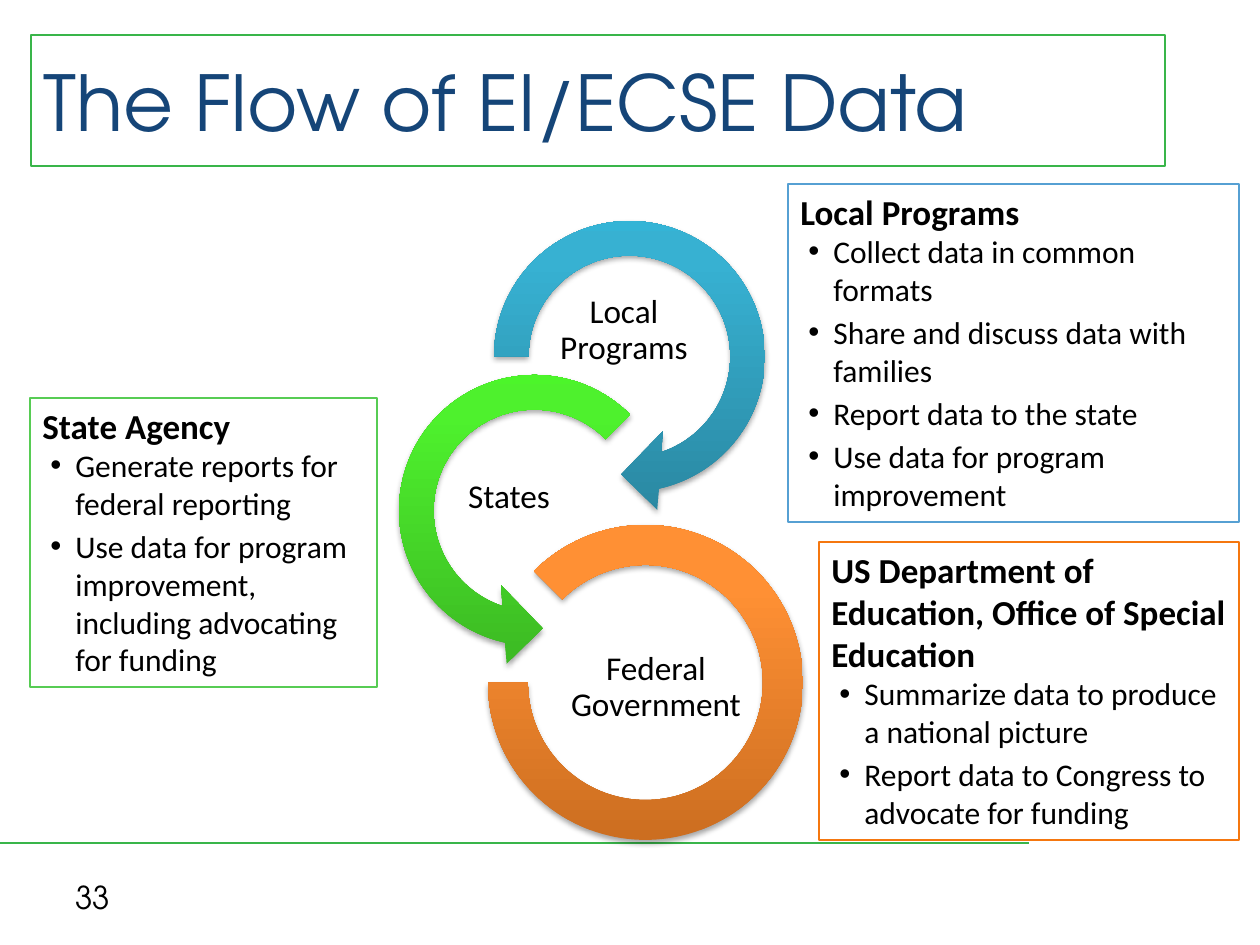
from copy import deepcopy

from lxml import etree
from pptx import Presentation
from pptx.dml.color import RGBColor
from pptx.enum.shapes import MSO_CONNECTOR, MSO_SHAPE
from pptx.enum.text import MSO_ANCHOR, PP_ALIGN
from pptx.oxml import parse_xml
from pptx.oxml.ns import nsdecls, qn
from pptx.util import Pt

PX = 914400 / 126
STRAIGHT = MSO_CONNECTOR.STRAIGHT
RECTANGLE = MSO_SHAPE.RECTANGLE
CIRCULAR_ARROW = MSO_SHAPE.CIRCULAR_ARROW
LEFT_CIRCULAR_ARROW = MSO_SHAPE.LEFT_CIRCULAR_ARROW
BLOCK_ARC = MSO_SHAPE.BLOCK_ARC
MIDDLE, TOP = MSO_ANCHOR.MIDDLE, MSO_ANCHOR.TOP
LEFT, CENTER = PP_ALIGN.LEFT, PP_ALIGN.CENTER

THEME = {
    "display": "TeX Gyre Adventor", "body": "Calibri",
    "title": "154578", "text": "000000", "rule": "39B54A",
    "local": "56A0D3", "state": "57CC54", "federal": "F5770F",
    "blues": ("2A88A2", "37B1D2", "34B4D6"),
    "greens": ("3CB923", "4EF12D", "4CF52A"),
    "oranges": ("CC6E20", "FF9034", "FF9136"),
    "title_size": 44, "heading_size": 20, "label_size": 19, "bullet_size": 18,
}


def box(*px):
    return [round(value * PX) for value in px]


def format_text(paragraph, size, font="body", color="text", bold=False):
    for run in paragraph.runs:
        run.font.name = THEME[font]
        run.font.size = Pt(THEME[size])
        run.font.bold = bold
        run.font.color.rgb = RGBColor.from_string(THEME[color])


presentation = Presentation()
presentation.slide_width, presentation.slide_height = box(1260, 945)
slide = presentation.slides.add_slide(presentation.slide_layouts[6])
shapes = slide.shapes

# Footer rule and slide number
rule = shapes.add_connector(STRAIGHT, *box(0, 843, 1029, 843))
rule.line.color.rgb = RGBColor.from_string(THEME["rule"])
rule.line.width = Pt(1.5)
etree.SubElement(rule._element.spPr, qn("a:effectLst"))

number = shapes.add_textbox(*box(63, 872, 294, 50))
number.text_frame.text = "33"
number.text_frame.vertical_anchor = MIDDLE
format_text(number.text_frame.paragraphs[0], "bullet_size", "display")

# Title
title = shapes.add_textbox(*box(31, 35, 1134, 131))
title.line.color.rgb = RGBColor.from_string(THEME["rule"])
title.line.width = Pt(1)
title.text_frame.text = "The Flow of EI/ECSE Data"
title.text_frame.word_wrap = True
title.text_frame.vertical_anchor = MIDDLE
format_text(title.text_frame.paragraphs[0], "title_size", "display", "title")

# Labels inside the rings
for text, left, top in (
    ("Local Programs", 535, 294),
    ("States", 420, 461),
    ("Federal Government", 567, 651),
):
    label = shapes.add_textbox(*box(left, top, 178, 74))
    frame = label.text_frame
    frame.text = text
    frame.word_wrap = True
    frame.vertical_anchor = MIDDLE
    frame.margin_left, frame.margin_top, frame.margin_right, frame.margin_bottom = box(1, 1, 1, 1)
    paragraph = frame.paragraphs[0]
    paragraph.alignment = CENTER
    paragraph.line_spacing = 0.9
    format_text(paragraph, "label_size")

# Interlocking rings, dark at the bottom and light at the top
for kind, left, top, adjustments, colors in (
    (CIRCULAR_ARROW, 472, 199, (0.11, 11.42, 45, 108, 0.125), "blues"),
    (LEFT_CIRCULAR_ARROW, 377, 353, (0.11, 11.42, 63, 189, 0.125), "greens"),
    (BLOCK_ARC, 488, 525, (135, 108, 0.127), "oranges"),
):
    ring = shapes.add_shape(kind, *box(left, top, 315, 315))
    for index, value in enumerate(adjustments):
        ring.adjustments[index] = value
    ring.line.fill.background()
    ring.fill.gradient()
    ring.fill.gradient_angle = 90
    stop_list = ring._element.spPr.find(".//" + qn("a:gsLst"))
    stop_list.append(deepcopy(stop_list[-1]))
    for stop, position, color in zip(ring.fill.gradient_stops, (0, 0.8, 1), THEME[colors]):
        stop.position = position
        stop.color.rgb = RGBColor.from_string(color)
    ring.shadow.inherit = False
    ring._element.spPr.find(qn("a:effectLst")).append(parse_xml(
        f'<a:outerShdw {nsdecls("a")} blurRad="40000" dist="23000" dir="5400000" rotWithShape="0">'
        '<a:srgbClr val="000000"><a:alpha val="35000"/></a:srgbClr></a:outerShdw>'))

# Panels describing each level
indent, hanging = box(33, -25)
for heading, bullets, bounds, color in (
    ("Local Programs",
     ("Collect data in common formats", "Share and discuss data with families",
      "Report data to the state", "Use data for program improvement"),
     (788, 184, 451, 338), "local"),
    ("State Agency",
     ("Generate reports for federal reporting",
      "Use data for program improvement, including advocating for funding"),
     (30, 398, 347, 289), "state"),
    ("US Department of Education, Office of Special Education",
     ("Summarize data to produce a national picture",
      "Report data to Congress to advocate for funding"),
     (819, 542, 420, 298), "federal"),
):
    panel = shapes.add_shape(RECTANGLE, *box(*bounds))
    panel.shadow.inherit = False
    panel.fill.background()
    panel.line.color.rgb = RGBColor.from_string(THEME[color])
    panel.line.width = Pt(0.75)
    frame = panel.text_frame
    frame.word_wrap = True
    frame.vertical_anchor = TOP
    frame.text = heading
    frame.paragraphs[0].alignment = LEFT
    format_text(frame.paragraphs[0], "heading_size", bold=True)
    for text in bullets:
        paragraph = frame.add_paragraph()
        paragraph.text = text
        paragraph.alignment = LEFT
        paragraph.space_after = Pt(3)
        properties = paragraph._p.get_or_add_pPr()
        properties.set("marL", str(indent))
        properties.set("indent", str(hanging))
        etree.SubElement(properties, qn("a:buFont"), typeface="Arial")
        etree.SubElement(properties, qn("a:buChar"), char="•")
        format_text(paragraph, "bullet_size")

presentation.save("out.pptx")
